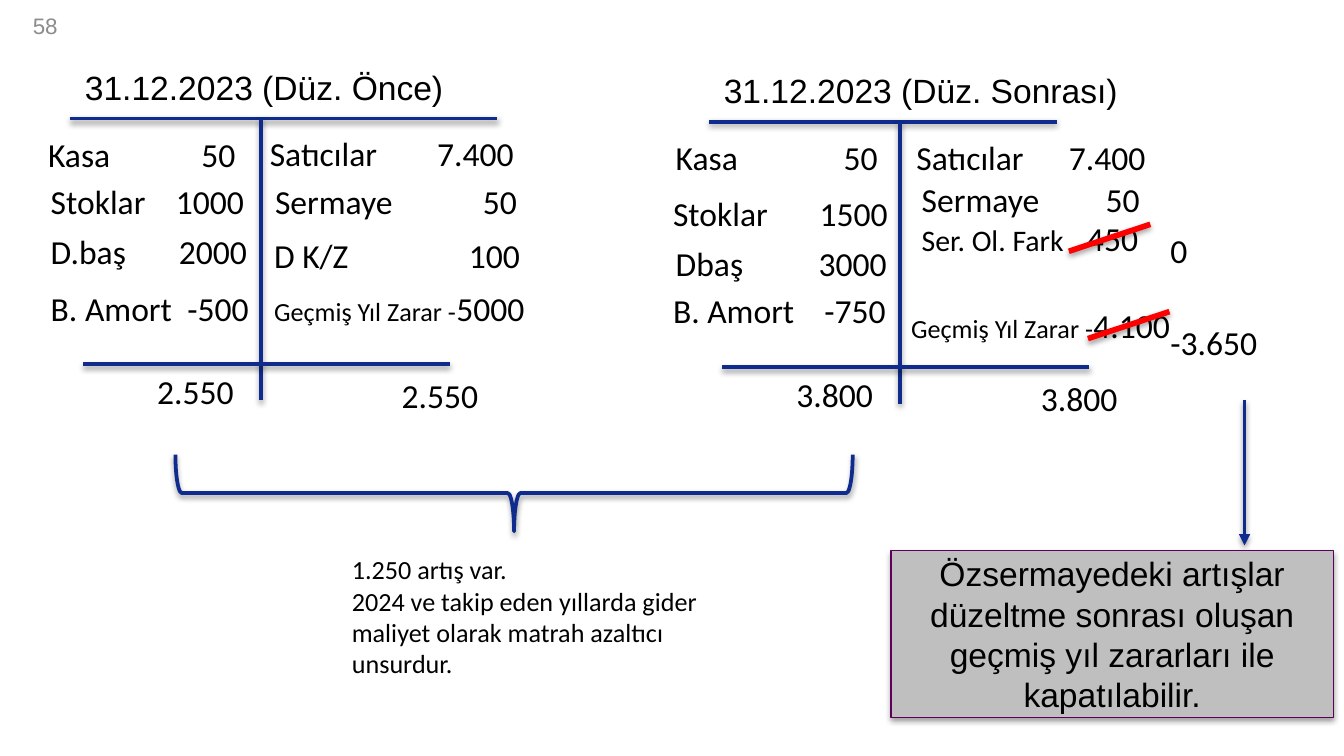
from dataclasses import dataclass
from typing import Optional

from lxml.etree import SubElement
from pptx import Presentation
from pptx.dml.color import RGBColor
from pptx.enum.shapes import MSO_CONNECTOR, MSO_SHAPE
from pptx.enum.text import MSO_ANCHOR, MSO_AUTO_SIZE, PP_ALIGN
from pptx.oxml.ns import qn
from pptx.util import Cm, Pt

NAVY, RED, BLACK, GRAY = "0E2B8D", "FF0000", "000000", "8C8C8C"
INSET = 0.25
ROW_HEIGHT = 1.03


@dataclass
class Account:
    heading: str
    total: str
    dx: float
    dy: float
    rule_width: float


@dataclass
class Entry:
    """A ledger row; amounts end at `right`, or follow the label if it is None."""
    label: str
    amount: str
    left: float
    top: float
    right: Optional[float] = None
    label_size: int = 18


ACCOUNTS = [
    Account("31.12.2023 (Düz. Önce)", "2.550", 0, 0, 8.08),
    Account("31.12.2023 (Düz. Sonrası)", "3.800", 12.08, 0.06, 6.58),
]

ENTRIES = [
    Entry("Kasa", "50", 0.66, 2.41, 4.45),
    Entry("Stoklar", "1000", 0.71, 3.3, 4.61),
    Entry("D.baş", "2000", 0.71, 4.24, 4.67),
    Entry("B. Amort", "-500", 0.71, 5.31, 4.7),
    Entry("Satıcılar", "7.400", 4.85, 2.39, 9.71),
    Entry("Sermaye", "50", 4.95, 3.3, 9.77),
    Entry("D K/Z", "100", 4.93, 4.32, 9.83),
    Entry("Geçmiş Yıl Zarar -", "5000", 4.93, 5.31, label_size=14),
    Entry("Kasa", "50", 12.52, 2.46, 16.59),
    Entry("Stoklar", "1500", 12.47, 3.53, 16.78),
    Entry("Dbaş", "3000", 12.52, 4.47, 16.76),
    Entry("B. Amort", "-750", 12.47, 5.36, 16.74),
    Entry("Satıcılar", "7.400", 17.07, 2.46, 21.65),
    Entry("Sermaye", "50", 17.17, 3.25, 21.54),
    Entry("Ser. Ol. Fark", "450", 17.17, 3.99, 21.51, 16),
    Entry("Geçmiş Yıl Zarar -", "4.100", 16.97, 5.64, label_size=14),
]


def color(value: str) -> RGBColor:
    return RGBColor.from_string(value)


def add_shadow(shape) -> None:
    properties = shape._element.spPr
    effects = properties.find(qn("a:effectLst"))
    if effects is None:
        effects = SubElement(properties, qn("a:effectLst"))
    outer = SubElement(effects, qn("a:outerShdw"), blurRad=str(Pt(3.1)),
                       dist=str(Pt(1.6)), dir="5400000", rotWithShape="0")
    black = SubElement(outer, qn("a:srgbClr"), val=BLACK)
    SubElement(black, qn("a:alpha"), val="38000")


def draw_line(slide, x1: float, y1: float, x2: float, y2: float,
              stroke: str = NAVY, width: float = 2, arrow: bool = False) -> None:
    line = slide.shapes.add_connector(MSO_CONNECTOR.STRAIGHT, Cm(x1), Cm(y1), Cm(x2), Cm(y2))
    line.line.color.rgb = color(stroke)
    line.line.width = Pt(width)
    if arrow:
        SubElement(line.line._get_or_add_ln(), qn("a:tailEnd"), type="triangle")
    add_shadow(line)


def draw_shape(slide, preset: MSO_SHAPE, left: float, top: float, width: float,
               height: float, stroke: str, weight: float, fill: Optional[str] = None):
    shape = slide.shapes.add_shape(preset, Cm(left), Cm(top), Cm(width), Cm(height))
    shape.shadow.inherit = False
    if fill:
        shape.fill.solid()
        shape.fill.fore_color.rgb = color(fill)
    else:
        shape.fill.background()
    shape.line.color.rgb = color(stroke)
    shape.line.width = Pt(weight)
    add_shadow(shape)
    return shape


def format_font(font, size: float, name: str = "Calibri", fill: str = BLACK) -> None:
    font.size = Pt(size)
    font.name = name
    font.color.rgb = color(fill)


def write(frame, text: str, size: float = 18, name: str = "Calibri",
          fill: str = BLACK, align: PP_ALIGN = PP_ALIGN.LEFT) -> None:
    frame.word_wrap = True
    frame.text = text
    for paragraph in frame.paragraphs:
        paragraph.alignment = align
        format_font(paragraph.font, size, name, fill)


def add_box(slide, left: float, top: float, width: float, height: float = ROW_HEIGHT):
    return slide.shapes.add_textbox(Cm(left), Cm(top), Cm(width), Cm(height)).text_frame


def draw_account(slide, account: Account) -> None:
    """Draw the T frame with its two totals."""
    dx, dy = account.dx, account.dy
    draw_line(slide, 1.32 + dx, 2.24 + dy, 1.32 + dx + account.rule_width, 2.24 + dy)
    draw_line(slide, 4.93 + dx, 2.24 + dy, 4.93 + dx, 7.57 + dy)
    draw_line(slide, 1.57 + dx, 6.88 + dy, 8.51 + dx, 6.88 + dy)
    for left, top in ((2.72, 6.88), (7.34, 6.96)):
        write(add_box(slide, left + dx, top + dy, 2.06), account.total)


def draw_heading(slide, account: Account, title=None) -> None:
    left, top, width = 1.35 + account.dx, 1.14 + account.dy, 8.05
    if title is None:
        frame = add_box(slide, left, top, width)
    else:
        title.left, title.top = Cm(left), Cm(top)
        title.width, title.height = Cm(width), Cm(ROW_HEIGHT)
        frame = title.text_frame
        frame.auto_size = MSO_AUTO_SIZE.NONE
        frame.vertical_anchor = MSO_ANCHOR.TOP
    write(frame, account.heading, name="Arial")


def draw_entry(slide, entry: Entry) -> None:
    width = entry.right - entry.left + 2 * INSET if entry.right else 5.4
    frame = add_box(slide, entry.left, entry.top, width)
    frame.word_wrap = True
    paragraph = frame.paragraphs[0]
    separator = ""
    if entry.right:
        separator = "\t"
        tabs = SubElement(paragraph._p.get_or_add_pPr(), qn("a:tabLst"))
        stop = Cm(entry.right - entry.left - INSET)
        SubElement(tabs, qn("a:tab"), pos=str(stop), algn="r")
    for text, size in ((entry.label + separator, entry.label_size), (entry.amount, 18)):
        run = paragraph.add_run()
        run.text = text
        format_font(run.font, size)


def main() -> None:
    presentation = Presentation()
    presentation.slide_width, presentation.slide_height = Cm(25.4), Cm(14.29)
    slide = presentation.slides.add_slide(presentation.slide_layouts[5])

    before, after = ACCOUNTS
    draw_heading(slide, before, slide.shapes.title)
    draw_heading(slide, after)
    for account in ACCOUNTS:
        draw_account(slide, account)
    for entry in ENTRIES:
        draw_entry(slide, entry)

    brace = draw_shape(slide, MSO_SHAPE.RIGHT_BRACE, 8.99, 2.92, 1.45, 12.8, NAVY, 2)
    brace.rotation = 90
    write(add_box(slide, 6.4, 10.34, 7.37, 2.64),
          "1.250 artış var.\n2024 ve takip eden yıllarda gider maliyet olarak "
          "matrah azaltıcı unsurdur.", 14)

    for right, top, corrected, corrected_top in (
            (21.74, 4.24, "0", 4.22), (22.1, 5.89, "-3.650", 5.97)):
        draw_line(slide, right, top, right - 1.54, top + 0.51, RED, 3)
        write(add_box(slide, 21.87, corrected_top, 2.29), corrected)

    draw_line(slide, 23.52, 7.57, 23.52, 10.31, arrow=True)
    conclusion = draw_shape(slide, MSO_SHAPE.RECTANGLE, 16.84, 10.41, 8.36, 3.15,
                            "5D005C", 0.75, "BFBFBF").text_frame
    conclusion.vertical_anchor = MSO_ANCHOR.MIDDLE
    write(conclusion, "Özsermayedeki artışlar düzeltme sonrası oluşan geçmiş yıl "
          "zararları ile kapatılabilir.", name="Arial", align=PP_ALIGN.CENTER)

    page_number = add_box(slide, 0.1, 0.1, 1.24, 0.76)
    page_number.vertical_anchor = MSO_ANCHOR.MIDDLE
    write(page_number, "58", 12, "Arial", GRAY, PP_ALIGN.RIGHT)

    presentation.save("out.pptx")


if __name__ == "__main__":
    main()
